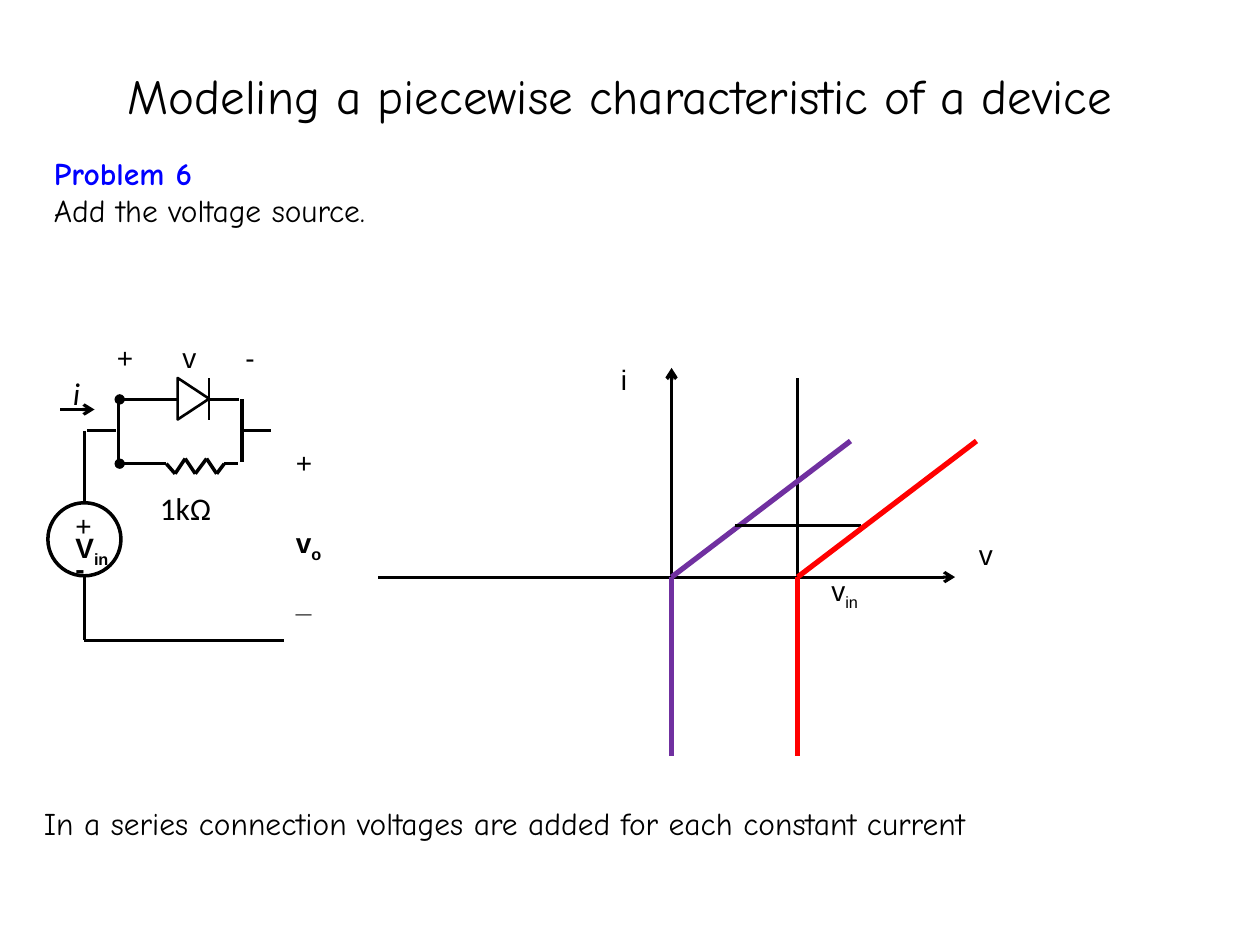
from dataclasses import dataclass
from itertools import pairwise

from lxml import etree
from pptx import Presentation
from pptx.dml.color import RGBColor
from pptx.enum.shapes import MSO_CONNECTOR, MSO_SHAPE
from pptx.enum.text import MSO_ANCHOR, MSO_AUTO_SIZE, PP_ALIGN
from pptx.oxml.ns import qn
from pptx.util import Emu, Pt

STRAIGHT = MSO_CONNECTOR.STRAIGHT
TRIANGLE, OVAL = MSO_SHAPE.ISOSCELES_TRIANGLE, MSO_SHAPE.OVAL
CENTER, MIDDLE = PP_ALIGN.CENTER, MSO_ANCHOR.MIDDLE
GROW = MSO_AUTO_SIZE.SHAPE_TO_FIT_TEXT
PX = 9144
BLACK, BLUE, PURPLE, RED = "000000", "0000FF", "7030A0", "FF0000"
HAND, SANS, BODY = "Comic Neue", "Arial", "Calibri"


@dataclass
class Wire:
    start: tuple[int, int]
    end: tuple[int, int]
    width: float = 1.75
    color: str = BLACK
    head: str = ""
    tail: str = ""


@dataclass
class Para:
    text: str
    sub: str = ""
    bold: bool = False
    italic: bool = False
    color: str = BLACK
    before: int = 0


@dataclass
class Label:
    box: tuple[int, int, int, int]
    paras: list[Para]
    font: str = SANS
    size: int = 16
    spacing: float | None = 0.6
    wrap: bool = True
    title: bool = False


def px(n: int) -> Emu:
    return Emu(n * PX)


def rgb(color: str) -> RGBColor:
    return RGBColor.from_string(color)


def draw_wire(shapes, w: Wire) -> None:
    s = shapes.add_connector(STRAIGHT, *map(px, w.start + w.end))
    s.line.width = Pt(w.width)
    s.line.color.rgb = rgb(w.color)
    ln = s.line._get_or_add_ln()
    for tag, kind in (("a:headEnd", w.head), ("a:tailEnd", w.tail)):
        if kind:
            etree.SubElement(ln, qn(tag), type=kind)
    etree.SubElement(s._element.spPr, qn("a:effectLst"))


def draw_label(shapes, label: Label) -> None:
    tf = shapes.add_textbox(*map(px, label.box)).text_frame
    tf.word_wrap = label.wrap
    if label.title:
        tf.vertical_anchor = MIDDLE
    else:
        tf.auto_size = GROW
    for i, para in enumerate(label.paras):
        p = tf.add_paragraph() if i else tf.paragraphs[0]
        p.line_spacing = label.spacing
        p.space_before = Pt(para.before)
        if label.title:
            p.alignment = CENTER
        p.font.name, p.font.size = label.font, Pt(label.size)
        p.font.bold, p.font.italic = para.bold, para.italic
        p.font.color.rgb = rgb(para.color)
        p.add_run().text = para.text
        if para.sub:
            r = p.add_run()
            r.text = para.sub
            r.font._element.set("baseline", "-25000")


def draw_outline(shapes, kind, box: tuple[int, int, int, int],
                 width: float, rotation: int = 0) -> None:
    s = shapes.add_shape(kind, *map(px, box))
    s.rotation = rotation
    s.shadow.inherit = False
    s.fill.background()
    s.line.color.rgb = rgb(BLACK)
    s.line.width = Pt(width)


RESISTOR = [(121, 368), (132, 368), (139, 376), (147, 364), (155, 376),
            (164, 364), (172, 376), (178, 368), (189, 368)]

CIRCUIT = [
    Wire((166, 300), (166, 333), 1.5),
    *(Wire(a, b, 2) for a, b in pairwise(RESISTOR)),
    Wire((95, 317), (141, 317), head="oval"),
    Wire((125, 368), (95, 368), tail="oval"),
    Wire((48, 325), (75, 325), tail="arrow"),
    Wire((215, 342), (192, 342)),
    Wire((190, 317), (167, 317)),
    Wire((92, 342), (69, 342)),
    Wire((192, 317), (192, 367), 2),
    Wire((94, 317), (94, 367), 2),
    Wire((67, 458), (67, 508), 2),
    Wire((67, 342), (67, 399), 2),
    Wire((225, 508), (67, 508)),
]

ORIGIN_X, SHIFTED_X, AXIS_Y = 533, 633, 458


def characteristic(x: int, color: str) -> list[Wire]:
    return [Wire((x, AXIS_Y), (x, 600), 3, color),
            Wire((x + 142, 350), (x, AXIS_Y), 3, color)]


GRAPH = [
    Wire((ORIGIN_X, 292), (ORIGIN_X, 508), 2, head="arrow"),
    Wire((758, AXIS_Y), (300, AXIS_Y), head="arrow"),
    Wire((SHIFTED_X, 558), (SHIFTED_X, 300), 2),
    *characteristic(ORIGIN_X, PURPLE),
    Wire((683, 417), (583, 417)),
    *characteristic(SHIFTED_X, RED),
]

SYMBOLS = [("-", 185, 275), ("+", 83, 275), ("v", 135, 275),
           ("v", 767, 431), ("i", 483, 292)]

LABELS = [
    Label((33, 117, 925, 71),
          [Para("Problem 6", bold=True, color=BLUE),
           Para("Add the voltage source.")], HAND, 18, None),
    Label((17, 0, 950, 150),
          [Para("Modeling a piecewise characteristic of a device")],
          HAND, 28, None, title=True),
    Label((25, 633, 925, 40),
          [Para("In a series connection voltages are added "
                "for each constant current")], HAND, 18, None),
    Label((117, 383, 66, 40), [Para("1kΩ")], BODY, 18, None, wrap=False),
    Label((48, 292, 26, 40), [Para("i", italic=True)], BODY, 18, None,
          wrap=False),
    *(Label((x, y, 27, 27), [Para(text)]) for text, x, y in SYMBOLS),
    Label((225, 358, 67, 139),
          [Para("+"), Para("v", "o", bold=True, before=33),
           Para("_", bold=True, before=22)]),
    Label((50, 408, 67, 59),
          [Para("+"), Para("V", "in", bold=True), Para("-", bold=True)]),
    Label((650, 458, 68, 27), [Para("v", "in")]),
]


def main() -> None:
    prs = Presentation()
    prs.slide_width, prs.slide_height = px(1000), px(750)
    shapes = prs.slides.add_slide(prs.slide_layouts[6]).shapes
    draw_outline(shapes, TRIANGLE, (137, 304, 33, 25), 1.5, 90)
    draw_outline(shapes, OVAL, (38, 399, 58, 58), 2)
    for wire in CIRCUIT + GRAPH:
        draw_wire(shapes, wire)
    for label in LABELS:
        draw_label(shapes, label)
    prs.save("out.pptx")


if __name__ == "__main__":
    main()
